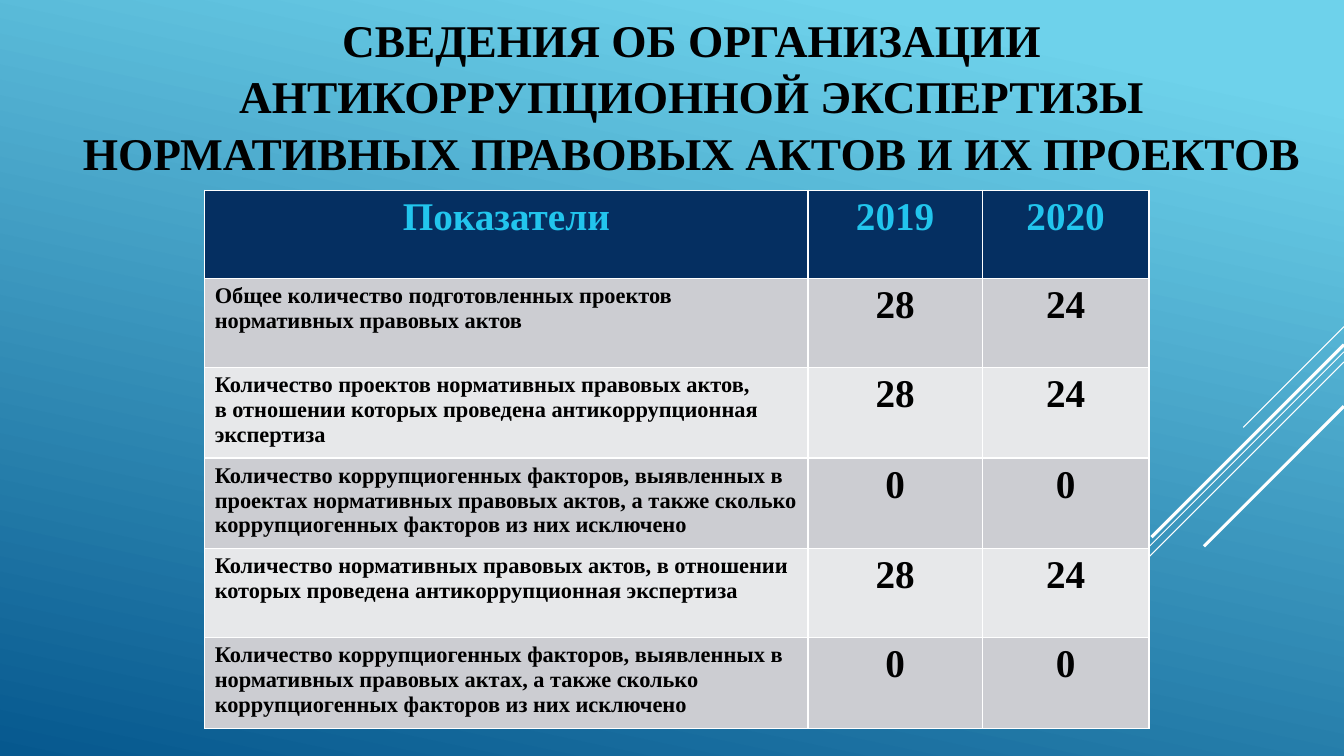
"""Build the slide on anti-corruption review of regulatory acts."""
from lxml.etree import SubElement
from pptx import Presentation
from pptx.dml.color import RGBColor
from pptx.enum.shapes import MSO_CONNECTOR
from pptx.enum.text import MSO_ANCHOR, PP_ALIGN
from pptx.oxml.ns import qn
from pptx.util import Pt


def color(value):
    return RGBColor.from_string(value)


def style(paragraph, size, font_color, align):
    paragraph.alignment = align
    paragraph.font.name = "Times New Roman"
    paragraph.font.size = Pt(size)
    paragraph.font.bold = True
    paragraph.font.color.rgb = color(font_color)


deck = Presentation()
deck.slide_width, deck.slide_height = Pt(960), Pt(540)
slide = deck.slides.add_slide(deck.slide_layouts[6])

backdrop = slide.background.fill
backdrop.gradient()
backdrop.gradient_angle = 258
for stop, position, shade in zip(backdrop.gradient_stops, (0.1, 1), ("6ED2EB", "06588E")):
    stop.position = position
    stop.color.rgb = color(shade)

RAYS = [(233.3, 72, 0.75), (251.3, 234.7, 0.75), (258.5, 149.3, 0.75),
        (246.2, 137.5, 2.25), (290.2, 100, 2.25)]
for top, reach, weight in RAYS:
    ray = slide.shapes.add_connector(
        MSO_CONNECTOR.STRAIGHT, Pt(960), Pt(top), Pt(960 - reach), Pt(top + reach))
    ray.line.color.rgb = color("FFFFFF")
    ray.line.width = Pt(weight)
    SubElement(ray._element.spPr, qn("a:effectLst"))

title = slide.shapes.add_textbox(Pt(49), Pt(23), Pt(890), Pt(89.3)).text_frame
title.word_wrap = True
title.vertical_anchor = MSO_ANCHOR.MIDDLE
title.text = ("СВЕДЕНИЯ ОБ ОРГАНИЗАЦИИ АНТИКОРРУПЦИОННОЙ ЭКСПЕРТИЗЫ "
              "НОРМАТИВНЫХ ПРАВОВЫХ АКТОВ И ИХ ПРОЕКТОВ")
style(title.paragraphs[0], 32.4, "000000", PP_ALIGN.CENTER)
title.paragraphs[0].line_spacing = 1.04

INDICATORS = [
    ("Показатели", "2019", "2020"),
    ("Общее количество подготовленных проектов нормативных правовых актов", "28", "24"),
    ("Количество проектов нормативных правовых актов,\n"
     "в отношении которых проведена антикоррупционная экспертиза", "28", "24"),
    ("Количество коррупциогенных факторов, выявленных в проектах нормативных правовых "
     "актов, а также сколько коррупциогенных факторов из них исключено", "0", "0"),
    ("Количество нормативных правовых актов, в отношении которых проведена "
     "антикоррупционная экспертиза", "28", "24"),
    ("Количество коррупциогенных факторов, выявленных в нормативных правовых актах, "
     "а также сколько коррупциогенных факторов из них исключено", "0", "0"),
]
COLUMN_WIDTHS = (431, 124.4, 119.2)
ROW_HEIGHT = 63.3

indicators = slide.shapes.add_table(
    len(INDICATORS), len(COLUMN_WIDTHS), Pt(146.2), Pt(135.8),
    Pt(sum(COLUMN_WIDTHS)), Pt(ROW_HEIGHT * len(INDICATORS))).table
for column, width in zip(indicators.columns, COLUMN_WIDTHS):
    column.width = Pt(width)

for r, entries in enumerate(INDICATORS):
    indicators.rows[r].height = Pt(ROW_HEIGHT)
    header = r == 0
    band = "052F61" if header else ("E7E8EA", "CCCDD2")[r % 2]
    for c, entry in enumerate(entries):
        cell = indicators.cell(r, c)
        cell.text = entry
        label = c == 0 and not header
        for paragraph in cell.text_frame.paragraphs:
            style(paragraph, 16 if label else 28, "22C5ED" if header else "000000",
                  PP_ALIGN.LEFT if label else PP_ALIGN.CENTER)
        for side in ("a:lnL", "a:lnR", "a:lnT", "a:lnB"):
            border = SubElement(cell._tc.get_or_add_tcPr(), qn(side), w=str(Pt(1)))
            SubElement(SubElement(border, qn("a:solidFill")), qn("a:srgbClr"), val="FFFFFF")
        cell.fill.solid()
        cell.fill.fore_color.rgb = color(band)

deck.save("out.pptx")
